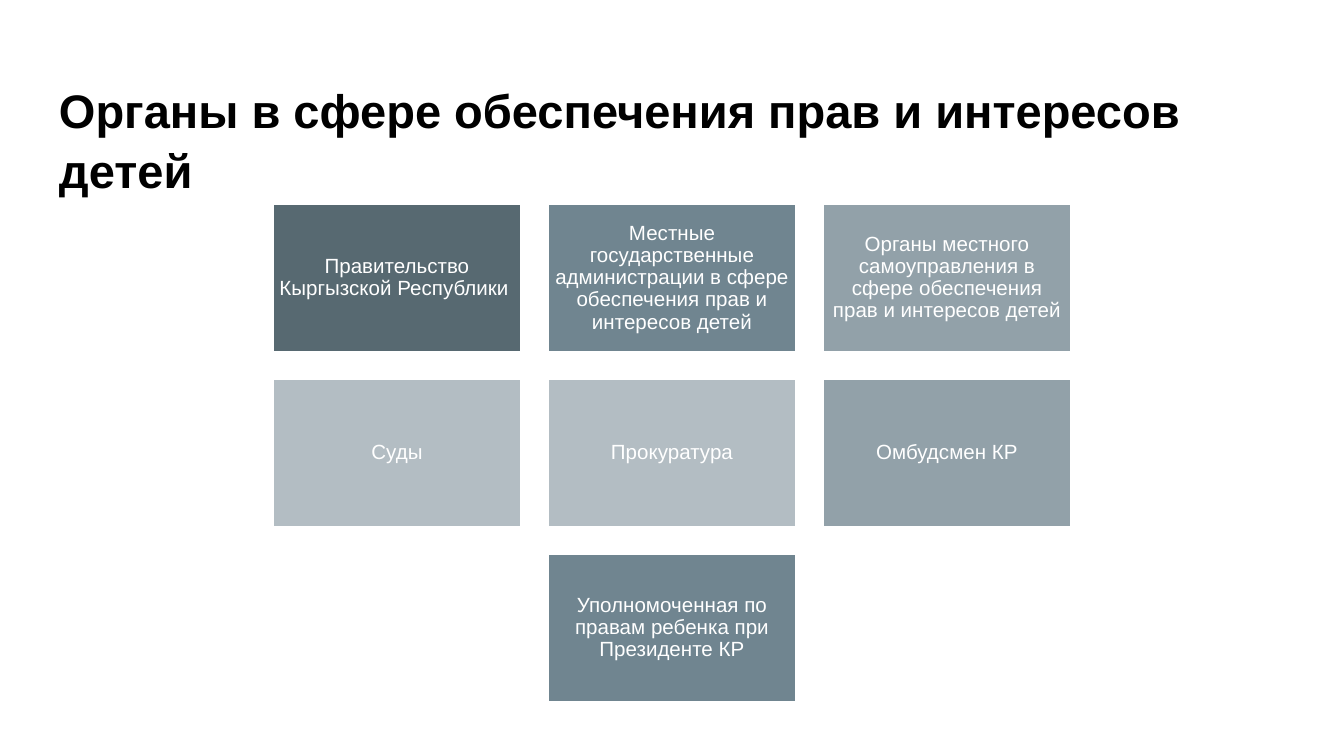
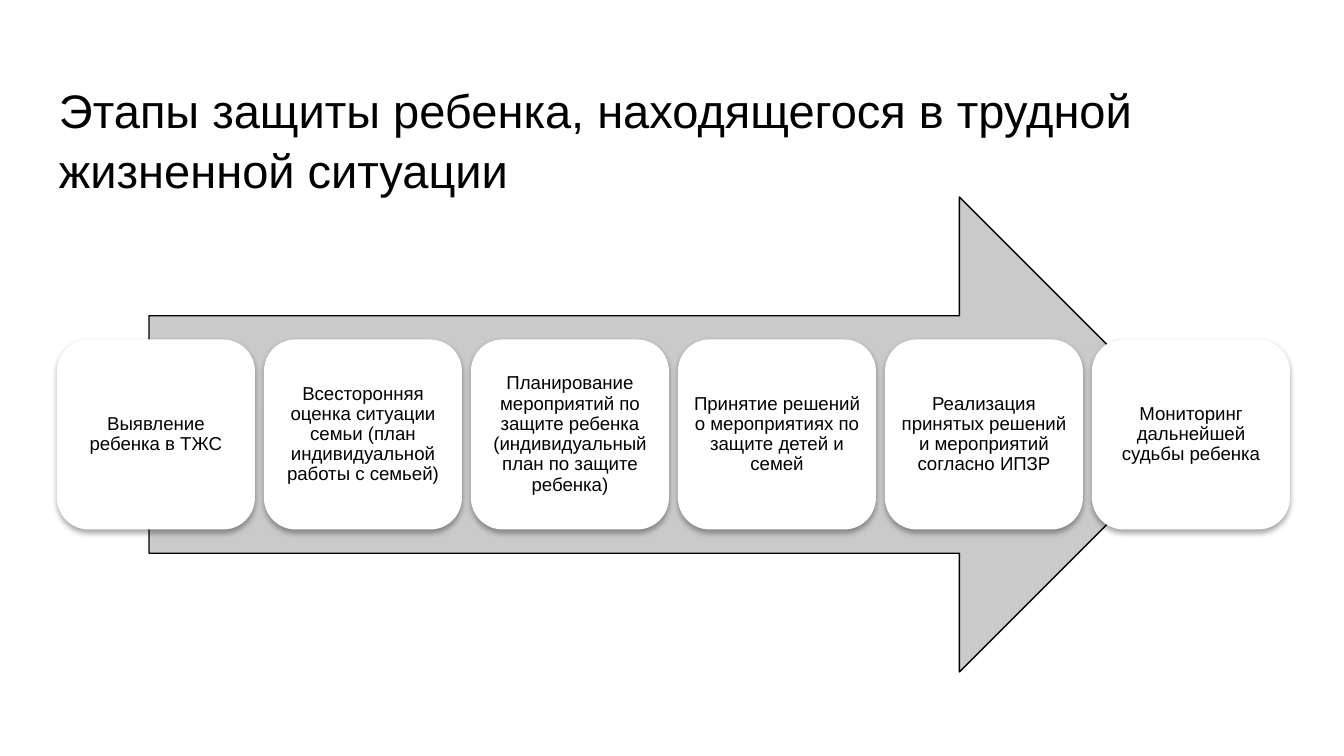
import pptx
import pptx.util
import pptx.dml.color
import pptx.enum.shapes
import pptx.enum.text
import pptx.oxml
import pptx.oxml.ns

SCALE = 914400 / 134.4  # EMU in one px
FONT = "Arial"
COLORS = {
    "black": "000000",
    "white": "FFFFFF",
    "arrow": "CACACA",
    "slate": "576971",
    "steel": "708590",
    "mist": "92A1A9",
    "pale": "B3BDC3",
}
SHAPES = pptx.enum.shapes.MSO_SHAPE
ALIGN = pptx.enum.text.PP_ALIGN
ANCHOR = pptx.enum.text.MSO_ANCHOR

TITLE_BOX = (46, 66, 1253, 85)
BODIES_BOX = (272, 203, 800, 500)
STAGES_BOX = (57, 197, 1233, 475)

# Rows of cards: text and fill
BODIES = [
    [("Правительство Кыргызской Республики ", "slate"),
     ("Местные государственные администрации в сфере обеспечения прав и интересов детей", "steel"),
     ("Органы местного самоуправления в сфере обеспечения прав и интересов детей", "mist")],
    [("Суды", "pale"), ("Прокуратура", "pale"), ("Омбудсмен КР", "mist")],
    [("Уполномоченная по правам ребенка при Президенте КР", "steel")],
]
STAGES = [
    "Выявление ребенка в ТЖС",
    "Всесторонняя оценка ситуации семьи (план индивидуальной работы с семьей)",
    "Планирование мероприятий по защите ребенка (индивидуальный план по защите ребенка)",
    "Принятие решений о мероприятиях по защите детей и семей",
    "Реализация принятых решений и мероприятий согласно ИПЗР",
    "Мониторинг дальнейшей судьбы ребенка",
]


def px(length):
    return pptx.util.Emu(round(length * SCALE))


def color(name):
    return pptx.dml.color.RGBColor.from_string(COLORS[name])


def write(shape, text, size, color_name, align, anchor, inset, spacing, bold=False):
    frame = shape.text_frame
    frame.word_wrap = True
    frame.auto_size = pptx.enum.text.MSO_AUTO_SIZE.NONE
    frame.vertical_anchor = anchor
    frame.margin_left = frame.margin_right = px(inset)
    frame.margin_top = frame.margin_bottom = px(inset)
    paragraph = frame.paragraphs[0]
    paragraph.text = text
    paragraph.alignment = align
    paragraph.line_spacing = spacing
    paragraph.font.name = FONT
    paragraph.font.size = pptx.util.Pt(size)
    paragraph.font.bold = bold
    paragraph.font.color.rgb = color(color_name)


def add_box(slide, kind, box, fill, line=None, line_width=0):
    shape = slide.shapes.add_shape(kind, *map(px, box))
    shape.shadow.inherit = False
    shape.fill.solid()
    shape.fill.fore_color.rgb = color(fill)
    if line:
        shape.line.color.rgb = color(line)
        shape.line.width = pptx.util.Pt(line_width)
    else:
        shape.line.fill.background()
    return shape


def add_soft_shadow(shape):
    effects = shape._element.spPr.find(pptx.oxml.ns.qn("a:effectLst"))
    effects.append(pptx.oxml.parse_xml(
        f'<a:outerShdw {pptx.oxml.ns.nsdecls("a")} blurRad="{pptx.util.Pt(3.1)}" '
        f'dist="{pptx.util.Pt(1.8)}" dir="5400000" rotWithShape="0">'
        f'<a:srgbClr val="{COLORS["black"]}"><a:alpha val="35000"/></a:srgbClr>'
        '</a:outerShdw>'))


def add_titled_slide(presentation, text, bold):
    slide = presentation.slides.add_slide(presentation.slide_layouts[5])
    title = slide.shapes.title
    title.left, title.top, title.width, title.height = map(px, TITLE_BOX)
    write(title, text, 25.2, "black", ALIGN.LEFT, ANCHOR.TOP, 13, 1.05, bold)
    return slide


def add_bodies(slide, box):
    left, top, width, height = box
    gap = 25
    columns = max(map(len, BODIES))
    card_width = (width - gap * (columns - 1)) // columns
    card_height = (height - gap * (len(BODIES) - 1)) // len(BODIES)
    for row, cards in enumerate(BODIES):
        # Short rows are centred
        indent = (columns - len(cards)) * (card_width + gap) // 2
        for column, (text, fill) in enumerate(cards):
            card = add_box(slide, SHAPES.RECTANGLE,
                           (left + indent + column * (card_width + gap),
                            top + row * (card_height + gap), card_width, card_height),
                           fill, "white", 2)
            write(card, text, 11, "white", ALIGN.CENTER, ANCHOR.MIDDLE, 7, 0.9)


def add_stages(slide, box):
    left, top, width, height = box
    # Arrow behind the stages
    add_box(slide, SHAPES.RIGHT_ARROW, (left + 92, top, width - 185, height),
            "arrow", "black", 0.75)
    # Stage cards along the middle of the arrow
    gap = 9
    card_width = (width - gap * (len(STAGES) - 1)) // len(STAGES)
    card_height = height * 2 // 5
    card_top = top + (height - card_height) / 2
    for index, text in enumerate(STAGES):
        card = add_box(slide, SHAPES.ROUNDED_RECTANGLE,
                       (left + index * (card_width + gap), card_top, card_width, card_height),
                       "white")
        add_soft_shadow(card)
        write(card, text, 10, "black", ALIGN.CENTER, ANCHOR.MIDDLE, 5, 0.9)


def main():
    presentation = pptx.Presentation()
    presentation.slide_width, presentation.slide_height = px(1344), px(756)

    slide = add_titled_slide(presentation, "Органы в сфере обеспечения прав и интересов детей", True)
    add_bodies(slide, BODIES_BOX)

    slide = add_titled_slide(
        presentation, "Этапы защиты ребенка, находящегося в трудной жизненной ситуации", False)
    add_stages(slide, STAGES_BOX)

    presentation.save("out.pptx")


if __name__ == "__main__":
    main()
